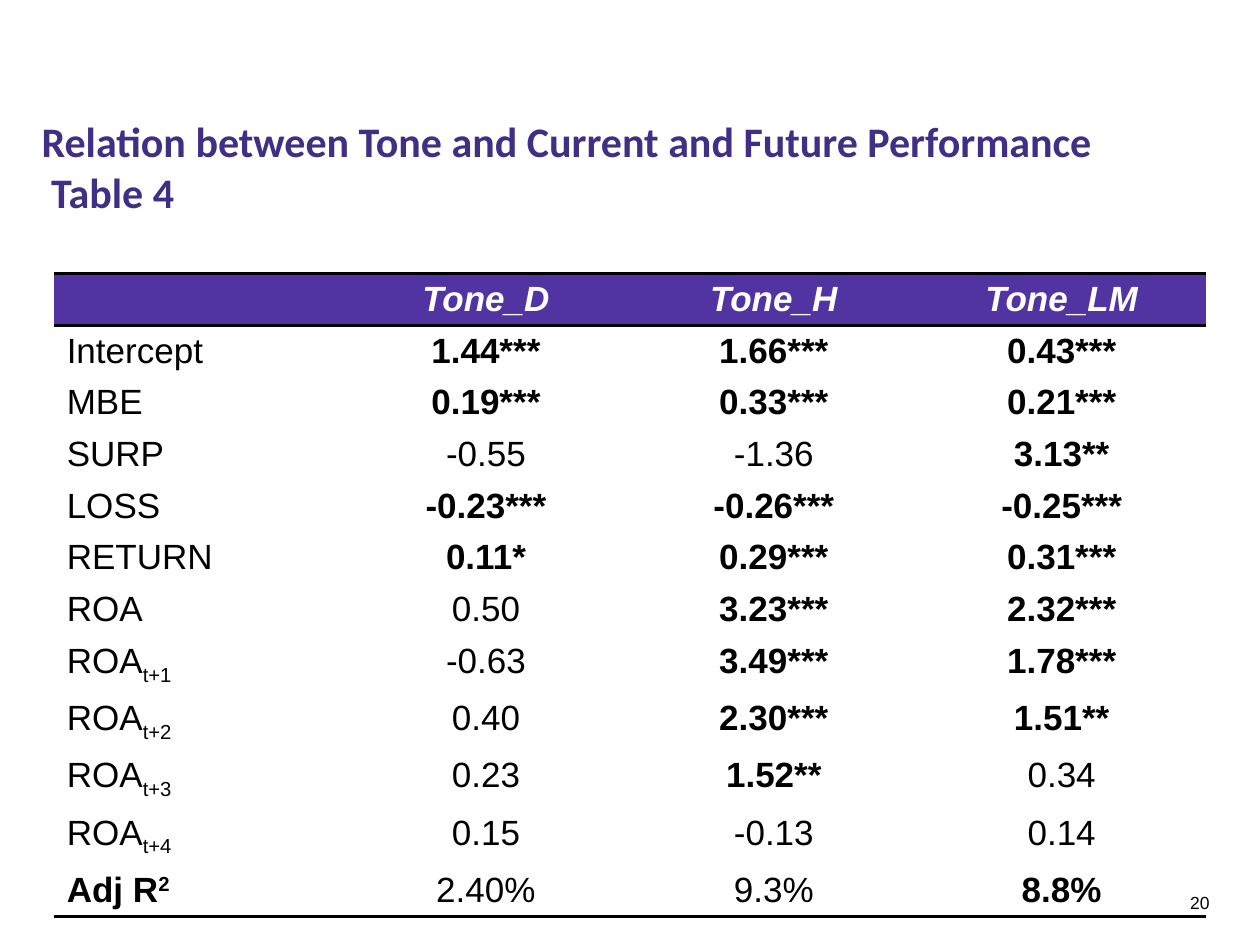
from dataclasses import dataclass

from lxml import etree
from pptx import Presentation
from pptx.dml.color import RGBColor
from pptx.enum.text import MSO_ANCHOR, MSO_AUTO_SIZE, PP_ALIGN
from pptx.oxml.ns import qn
from pptx.util import Inches, Pt

LEFT, CENTER, RIGHT = PP_ALIGN.LEFT, PP_ALIGN.CENTER, PP_ALIGN.RIGHT
TOP, FIXED_SIZE = MSO_ANCHOR.TOP, MSO_AUTO_SIZE.NONE
TITLE_ONLY = 5


@dataclass(frozen=True)
class Theme:
    title: str = "412F86"
    header: str = "5134A2"
    white: str = "FFFFFF"
    black: str = "000000"
    title_font: str = "Calibri"
    body_font: str = "Arial"
    title_size: int = 24
    table_size: int = 20
    number_size: int = 10
    rule_width: int = 2


THEME = Theme()
TITLE_LINES = ["Relation between Tone and Current and Future Performance", " Table 4"]
HEADERS = ["", "Tone_D", "Tone_H", "Tone_LM"]
# Label, subscript, then one value per tone measure
RESULTS = [
    ("Intercept", "", "1.44***", "1.66***", "0.43***"),
    ("MBE", "", "0.19***", "0.33***", "0.21***"),
    ("SURP", "", "-0.55", "-1.36", "3.13**"),
    ("LOSS", "", "-0.23***", "-0.26***", "-0.25***"),
    ("RETURN", "", "0.11*", "0.29***", "0.31***"),
    ("ROA", "", "0.50", "3.23***", "2.32***"),
    ("ROA", "t+1", "-0.63", "3.49***", "1.78***"),
    ("ROA", "t+2", "0.40", "2.30***", "1.51**"),
    ("ROA", "t+3", "0.23", "1.52**", "0.34"),
    ("ROA", "t+4", "0.15", "-0.13", "0.14"),
]
FIT_LABEL, FIT_POWER = "Adj R", "2"
FIT_VALUES = [("2.40%", False), ("9.3%", False), ("8.8%", True)]
ROW_COUNT = len(RESULTS) + 2
RULED_EDGES = {0, 1, ROW_COUNT}


def add_span(para, text, color, baseline=0, **formats):
    """Add a run; baseline is its shift in percent of the type size."""
    span = para.add_run()
    span.text = text
    values = {"name": THEME.body_font, "size": Pt(THEME.table_size),
              "bold": False, "italic": False, **formats}
    for name, value in values.items():
        setattr(span.font, name, value)
    span.font.color.rgb = RGBColor.from_string(color)
    if baseline:
        span.font._element.set("baseline", str(baseline * 1000))


def format_frame(frame):
    values = {"margin_left": 0, "margin_right": 0, "margin_top": 0, "margin_bottom": 0,
              "word_wrap": True, "auto_size": FIXED_SIZE, "vertical_anchor": TOP}
    for name, value in values.items():
        setattr(frame, name, value)


def add_title(page):
    title = page.shapes.title
    title.left, title.top = Inches(0.33), Inches(0.92)
    title.width, title.height = Inches(9.5), Inches(1)
    format_frame(title.text_frame)
    para = title.text_frame.paragraphs[0]
    para.alignment = LEFT
    for index, line in enumerate(TITLE_LINES):
        if index:
            para.add_line_break()
        add_span(para, line, THEME.title, name=THEME.title_font,
                 size=Pt(THEME.title_size), bold=True)


def add_page_number(page):
    box = page.shapes.add_textbox(Inches(9.25), Inches(7.08), Inches(0.35), Inches(0.17))
    format_frame(box.text_frame)
    para = box.text_frame.paragraphs[0]
    para.alignment = RIGHT
    add_span(para, "20", THEME.black, size=Pt(THEME.number_size))


def set_borders(cell, row):
    """Rule the edges above and below the header and below the last row."""
    properties = cell._tc.get_or_add_tcPr()
    ruled = {"a:lnL": False, "a:lnR": False,
             "a:lnT": row in RULED_EDGES, "a:lnB": row + 1 in RULED_EDGES}
    for tag, visible in ruled.items():
        line = etree.SubElement(properties, qn(tag), w=str(Pt(THEME.rule_width)))
        if visible:
            fill = etree.SubElement(line, qn("a:solidFill"))
            etree.SubElement(fill, qn("a:srgbClr"), val=THEME.black)
        else:
            etree.SubElement(line, qn("a:noFill"))


def format_cell(cell, row, column):
    set_borders(cell, row)
    if row == 0:
        cell.fill.solid()
        cell.fill.fore_color.rgb = RGBColor.from_string(THEME.header)
    else:
        cell.fill.background()
    para = cell.text_frame.paragraphs[0]
    para.alignment = CENTER if column else LEFT
    para.font.name = THEME.body_font
    para.font.size = Pt(THEME.table_size)


def fill_row(table, row, label, values, shifted="", baseline=0, bold_label=False):
    """Write a label with its sub- or superscript, then (value, bold) pairs."""
    paras = [table.cell(row, column).text_frame.paragraphs[0]
             for column in range(len(HEADERS))]
    add_span(paras[0], label, THEME.black, bold=bold_label)
    if shifted:
        add_span(paras[0], shifted, THEME.black, baseline, bold=bold_label)
    for para, (value, bold) in zip(paras[1:], values):
        add_span(para, value, THEME.black, bold=bold)


def add_results_table(page):
    frame = page.shapes.add_table(ROW_COUNT, len(HEADERS), Inches(0.43), Inches(2.17),
                                  Inches(9.14), Inches(4.87))
    table = frame.table
    table.first_row = table.horz_banding = False
    for row in range(ROW_COUNT):
        for column in range(len(HEADERS)):
            format_cell(table.cell(row, column), row, column)
    for column, header in enumerate(HEADERS):
        if header:
            add_span(table.cell(0, column).text_frame.paragraphs[0], header,
                     THEME.white, bold=True, italic=True)
    for row, (label, period, *values) in enumerate(RESULTS, start=1):
        marked = [(value, value.endswith("*")) for value in values]
        fill_row(table, row, label, marked, period, baseline=-25)
    fill_row(table, ROW_COUNT - 1, FIT_LABEL, FIT_VALUES, FIT_POWER,
             baseline=30, bold_label=True)


def main():
    deck = Presentation()
    deck.slide_width, deck.slide_height = Inches(10), Inches(7.5)
    page = deck.slides.add_slide(deck.slide_layouts[TITLE_ONLY])
    add_page_number(page)
    add_title(page)
    add_results_table(page)
    deck.save("out.pptx")


if __name__ == "__main__":
    main()
